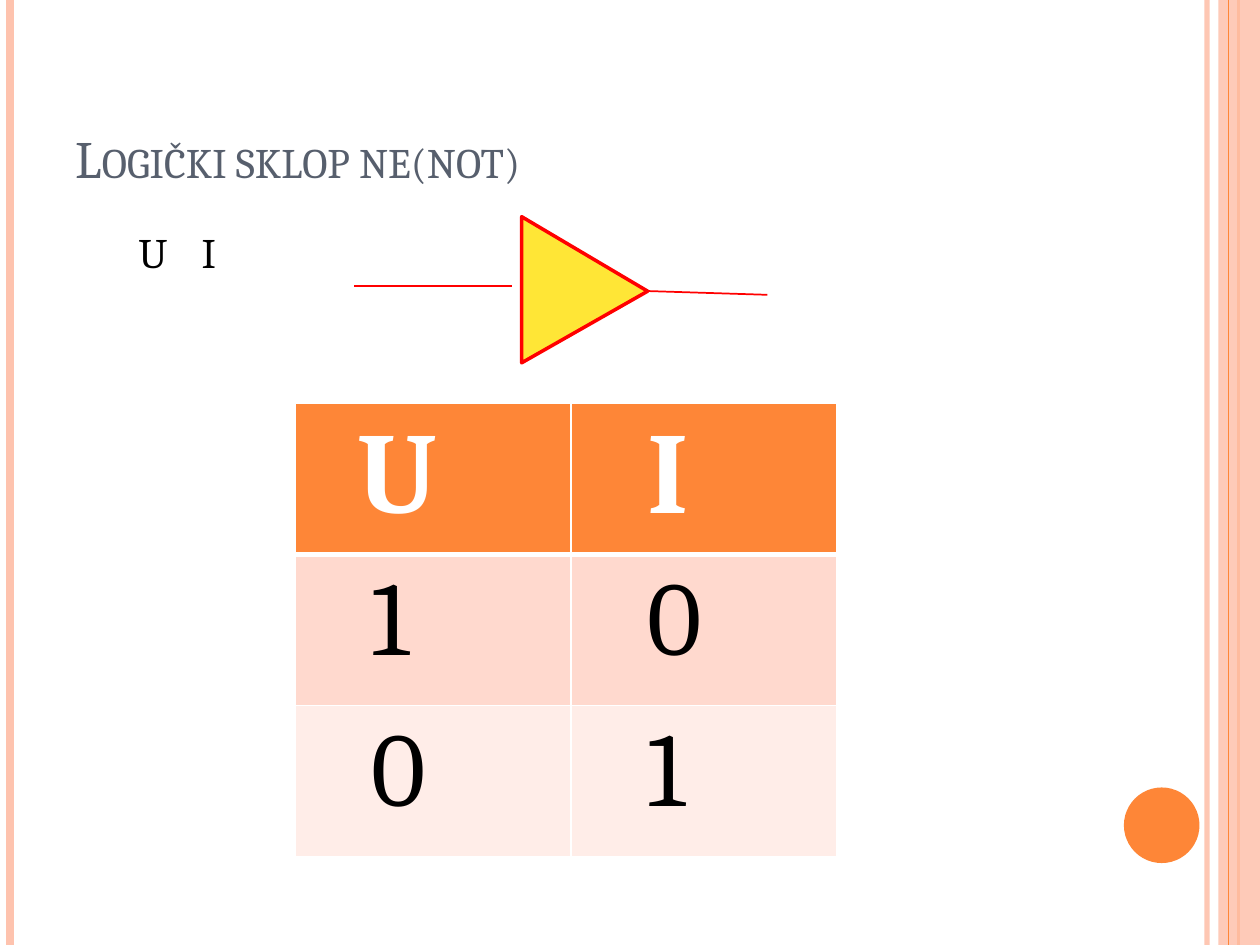
"""Build a slide showing the NOT gate with its symbol and truth table."""
import pptx
import pptx.dml.color
import pptx.enum.shapes
import pptx.enum.text
import pptx.oxml
import pptx.oxml.ns
import pptx.util

Inches = pptx.util.Inches
Pt = pptx.util.Pt
RGBColor = pptx.dml.color.RGBColor
Shape = pptx.enum.shapes.MSO_SHAPE

ORANGE = RGBColor(0xFE, 0x86, 0x37)
PEACH = RGBColor(0xFE, 0xC3, 0xAE)
SLATE = RGBColor(0x57, 0x5F, 0x6D)
YELLOW = RGBColor(0xFF, 0xE6, 0x36)
RED = RGBColor(0xFF, 0x00, 0x00)
BLACK = RGBColor(0x00, 0x00, 0x00)
WHITE = RGBColor(0xFF, 0xFF, 0xFF)
ROW_FILLS = [ORANGE, RGBColor(0xFF, 0xD9, 0xCE), RGBColor(0xFF, 0xED, 0xE8)]


class SlideBuilder:
    """Hold the font and the current slide, and add elements to it."""

    def __init__(self, slide, font="Cambria"):
        self.slide = slide
        self.font = font

    def add_xml(self, parent, tag, **attributes):
        """Append an empty drawing element and return it."""
        element = pptx.oxml.parse_xml(f"<a:{tag} {pptx.oxml.ns.nsdecls('a')}/>")
        for name, value in attributes.items():
            element.set(name, str(value))
        parent.append(element)
        return element

    def set_alpha(self, element, percent):
        """Make the solid colour within an element partly transparent."""
        colour = next(element.iter(pptx.oxml.ns.qn("a:srgbClr")))
        self.add_xml(colour, "alpha", val=percent * 1000)

    def format_paragraph(self, para, size, colour, bold=False):
        """Format every run of a paragraph."""
        for span in para.runs:
            span.font.name = self.font
            span.font.size = Pt(size)
            span.font.bold = bold
            span.font.color.rgb = colour

    def place(self, box, left, top, width, height):
        """Move and size a shape."""
        box.left, box.top = Inches(left), Inches(top)
        box.width, box.height = Inches(width), Inches(height)

    def title(self, text, *area):
        """Fill the title placeholder in small capitals."""
        box = self.slide.shapes.title
        self.place(box, *area)
        frame = box.text_frame
        frame.text = text
        frame.auto_size = pptx.enum.text.MSO_AUTO_SIZE.NONE
        frame.vertical_anchor = pptx.enum.text.MSO_ANCHOR.BOTTOM
        para = frame.paragraphs[0]
        para.alignment = pptx.enum.text.PP_ALIGN.LEFT
        self.format_paragraph(para, 30, SLATE)
        para.runs[0].font._element.set("cap", "small")

    def body(self, labels, stops, *area):
        """Fill the body placeholder with labels set at tab stops."""
        box = self.slide.placeholders[1]
        self.place(box, *area)
        frame = box.text_frame
        frame.auto_size = pptx.enum.text.MSO_AUTO_SIZE.NONE
        para = frame.paragraphs[0]
        para.text = "".join("\t" + label for label in labels)
        para.space_before = Pt(6)
        self.format_paragraph(para, 24, BLACK)
        properties = para._p.get_or_add_pPr()
        properties.set("marL", "0")
        properties.set("indent", "0")
        self.add_xml(properties, "buNone")
        tabs = self.add_xml(properties, "tabLst")
        for stop in stops:
            self.add_xml(tabs, "tab", pos=Inches(stop), algn="l")

    def shape(self, kind, area, fill, line=None, width=0):
        """Add a preset shape."""
        box = self.slide.shapes.add_shape(kind, *map(Inches, area))
        box.shadow.inherit = False
        box.fill.solid()
        box.fill.fore_color.rgb = fill
        if line is None:
            box.line.fill.background()
        else:
            box.line.color.rgb = line
            box.line.width = Pt(width)
        return box

    def line(self, start, end, colour, width):
        """Add a straight line."""
        connector = self.slide.shapes.add_connector(
            pptx.enum.shapes.MSO_CONNECTOR.STRAIGHT, *map(Inches, start + end))
        connector.line.color.rgb = colour
        connector.line.width = Pt(width)
        self.add_xml(connector._element.spPr, "effectLst")
        return connector

    def border(self, cell, side, width):
        """Add a white border to one side of a cell."""
        edge = self.add_xml(cell._tc.get_or_add_tcPr(), "ln" + side, w=Pt(width))
        fill = self.add_xml(edge, "solidFill")
        self.add_xml(fill, "srgbClr", val=WHITE)

    def table(self, rows, left, top, widths, row_height):
        """Add a truth table with a header row."""
        table = self.slide.shapes.add_table(
            len(rows), len(widths), Inches(left), Inches(top),
            Inches(sum(widths)), Inches(row_height * len(rows))).table
        for column, width in zip(table.columns, widths):
            column.width = Inches(width)
        for row_index, values in enumerate(rows):
            header = row_index == 0
            table.rows[row_index].height = Inches(row_height)
            for column_index, value in enumerate(values):
                cell = table.cell(row_index, column_index)
                for side in "LRTB":
                    thick = (header and side == "B") or (row_index == 1 and side == "T")
                    self.border(cell, side, 3 if thick else 1)
                cell.fill.solid()
                cell.fill.fore_color.rgb = ROW_FILLS[row_index]
                cell.margin_left = Inches(0.5 if header and column_index == 0 else 0.61)
                cell.text_frame.text = value
                self.format_paragraph(
                    cell.text_frame.paragraphs[0], 66 if header else 60,
                    WHITE if header else BLACK, header)

    def decoration(self):
        """Add the stripes and the circle at the slide edges."""
        stripe = self.line((9.58, 0), (9.58, 7.5), PEACH, 3)
        self.set_alpha(stripe._element, 93)
        self.line((0.08, 0), (0.08, 7.5), PEACH, 4.5)
        self.line((9.83, 0), (9.83, 7.5), ORANGE, 1.5)
        band = self.shape(Shape.RECTANGLE, (9.67, 0, 0.33, 7.5), PEACH)
        self.set_alpha(band._element, 87)
        self.line((9.75, 0), (9.75, 7.5), ORANGE, 0.75)
        self.shape(Shape.OVAL, (8.92, 6.25, 0.6, 0.6), ORANGE)

    def gate(self):
        """Add the gate symbol with its input and output wires."""
        triangle = self.shape(
            Shape.ISOSCELES_TRIANGLE, (4.06, 1.72, 1.16, 1), YELLOW, RED, 2)
        triangle.top = Inches(1.8)
        triangle.rotation = 90
        triangle.adjustments[0] = 0.51
        self.line((4.06, 2.27), (2.81, 2.27), RED, 1)
        self.line((5.14, 2.31), (6.09, 2.34), RED, 1)


def main():
    """Create the deck and save it."""
    deck = pptx.Presentation()
    deck.slide_width, deck.slide_height = Inches(10), Inches(7.5)
    builder = SlideBuilder(deck.slides.add_slide(deck.slide_layouts[1]))
    builder.decoration()
    builder.title("Logički sklop ne(not)", 0.5, 0.3, 8.17, 1.25)
    builder.body(["U", "I"], [1.83, 4.19], 0.5, 1.75, 8.17, 5.33)
    builder.gate()
    builder.table([["U", "I"], ["1", "0"], ["0", "1"]], 2.34, 3.2, [2.19, 2.11], 1.2)
    deck.save("out.pptx")


if __name__ == "__main__":
    main()
